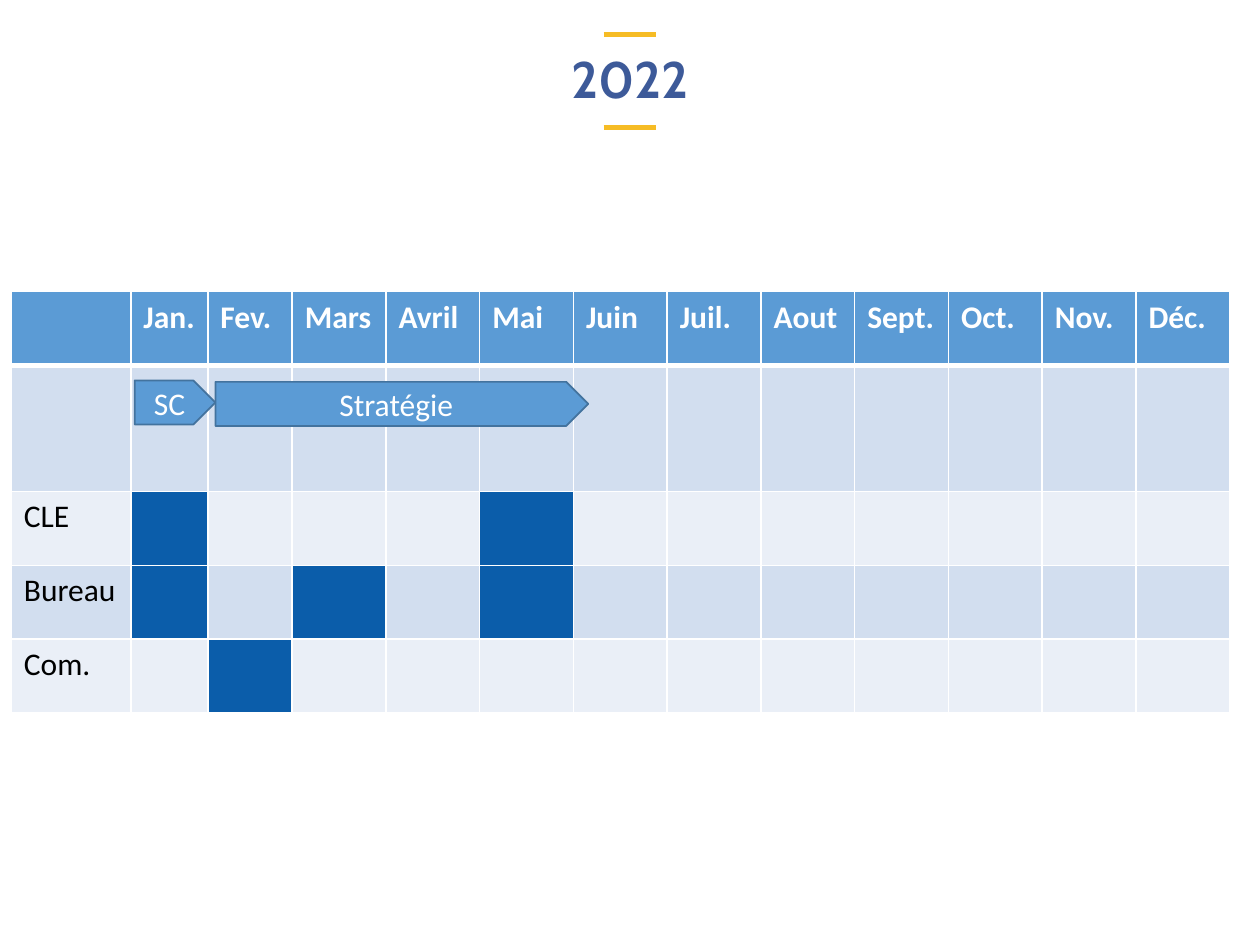
from lxml.etree import SubElement
from pptx import Presentation
from pptx.dml.color import RGBColor
from pptx.enum.shapes import MSO_CONNECTOR, MSO_SHAPE
from pptx.enum.text import MSO_ANCHOR, PP_ALIGN
from pptx.oxml.ns import qn
from pptx.util import Pt

WHITE = RGBColor(0xFF, 0xFF, 0xFF)
BLACK = RGBColor(0, 0, 0)
GOLD = RGBColor(0xF6, 0xBC, 0x25)
TITLE_BLUE = RGBColor(0x3D, 0x5A, 0x99)
HEADER = RGBColor(0x5B, 0x9B, 0xD5)
OUTLINE = RGBColor(0x43, 0x73, 0x9E)
MARKED = RGBColor(0x0B, 0x5D, 0xAA)
BANDS = [RGBColor(0xEA, 0xEF, 0xF7), RGBColor(0xD2, 0xDE, 0xEF)]

TITLE = "2022"
MONTHS = ["Jan.", "Fev.", "Mars", "Avril", "Mai", "Juin",
          "Juil.", "Aout", "Sept.", "Oct.", "Nov.", "Déc."]
MEETINGS = [
    ("", []),
    ("CLE", ["Jan.", "Mai"]),
    ("Bureau", ["Jan.", "Mars", "Mai"]),
    ("Com.", ["Fev."]),
]
PHASES = [("Stratégie", 123.1, 218.2, 213.1), ("SC", 77, 217.4, 46.1)]
PHASE_H = 25.2
COLS = [68.3, 44, 48.2] + [53.6] * 10
ROWS = [42.2, 72, 42.2, 42.2, 42.2]
TABLE_X, TABLE_Y = 6.5, 166.7
SLIDE_W, SLIDE_H = 720, 540
RULE_W, RULE_YS = 30, (19.6, 72.9)


def style(p, name, size, color, bold=False, align=None):
    p.font.name, p.font.size, p.font.bold = name, Pt(size), bold
    p.font.color.rgb = color
    if align is not None:
        p.alignment = align


def add_borders(cell, top, bottom):
    tcPr = cell._tc.get_or_add_tcPr()
    for side, width in (("L", 1), ("R", 1), ("T", top), ("B", bottom)):
        ln = SubElement(tcPr, qn(f"a:ln{side}"), w=str(Pt(width)))
        SubElement(SubElement(ln, qn("a:solidFill")), qn("a:srgbClr"), val=str(WHITE))


def add_title(s):
    for y in RULE_YS:
        x = (SLIDE_W - RULE_W) / 2
        line = s.shapes.add_connector(MSO_CONNECTOR.STRAIGHT, Pt(x), Pt(y), Pt(x + RULE_W), Pt(y))
        line.line.color.rgb, line.line.width = GOLD, Pt(2.75)
        SubElement(line._element.spPr, qn("a:effectLst"))
    tf = s.shapes.add_textbox(Pt(49.7), Pt(25.2), Pt(620.6), Pt(43.2)).text_frame
    tf.word_wrap, tf.vertical_anchor = True, MSO_ANCHOR.MIDDLE
    p = tf.paragraphs[0]
    p.text, p.line_spacing = TITLE, 0.9
    style(p, "Cabin", 29.3, TITLE_BLUE, True, PP_ALIGN.CENTER)


def add_calendar(s):
    table = s.shapes.add_table(len(ROWS), len(COLS), Pt(TABLE_X), Pt(TABLE_Y),
                               Pt(sum(COLS)), Pt(sum(ROWS))).table
    for col, width in zip(table.columns, COLS):
        col.width = Pt(width)
    for row, height in zip(table.rows, ROWS):
        row.height = Pt(height)
    for i in range(len(ROWS)):
        label, marked = MEETINGS[i - 1] if i else ("", [])
        for j, month in enumerate([""] + MONTHS):
            cell = table.cell(i, j)
            add_borders(cell, 3 if i == 1 else 1, 1 if i else 3)
            cell.fill.solid()
            cell.fill.fore_color.rgb = (
                HEADER if i == 0 else MARKED if month in marked else BANDS[i % 2])
            text = month if i == 0 else label if j == 0 else ""
            p = cell.text_frame.paragraphs[0]
            if text:
                p.text = text
            style(p, "Calibri", 18, BLACK if i else WHITE, i == 0)


def add_phases(s):
    for label, x, y, w in PHASES:
        sp = s.shapes.add_shape(MSO_SHAPE.PENTAGON, Pt(x), Pt(y), Pt(w), Pt(PHASE_H))
        sp.shadow.inherit = False
        sp.fill.solid()
        sp.fill.fore_color.rgb = HEADER
        sp.line.color.rgb, sp.line.width = OUTLINE, Pt(1)
        tf = sp.text_frame
        tf.vertical_anchor = MSO_ANCHOR.MIDDLE
        p = tf.paragraphs[0]
        p.text = label
        style(p, "Calibri", 18, WHITE, align=PP_ALIGN.CENTER)


def main():
    prs = Presentation()
    prs.slide_width, prs.slide_height = Pt(SLIDE_W), Pt(SLIDE_H)
    s = prs.slides.add_slide(prs.slide_layouts[6])
    add_title(s)
    add_calendar(s)
    add_phases(s)
    prs.save("out.pptx")


if __name__ == "__main__":
    main()
